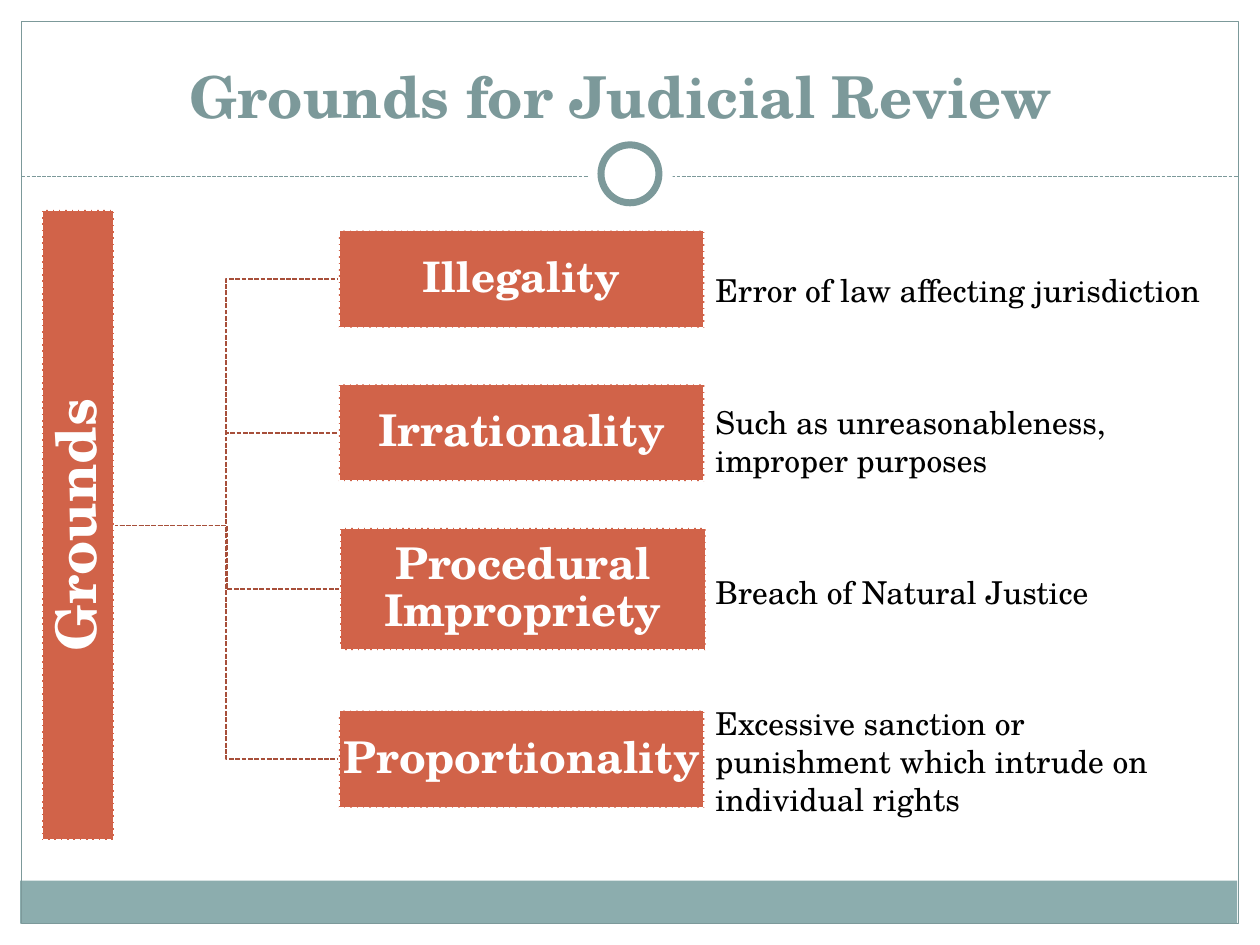
from dataclasses import dataclass

from lxml import etree
from pptx import Presentation
from pptx import util as u
from pptx.dml import color
from pptx.enum import dml, shapes, text
from pptx.oxml import ns


@dataclass(frozen=True)
class Theme:
    font: str = "TeX Gyre Schola"
    white: str = "FFFFFF"
    black: str = "000000"
    sage: str = "7C999A"
    band: str = "8CADAE"
    orange: str = "D16349"
    rust: str = "A74F3A"
    title_size: int = 33
    root_size: int = 32
    note_size: int = 18
    thin: float = 0.75
    dashed: float = 0.9
    ring: float = 4


THEME = Theme()
ROOT_EDGE, ROOT_MIDDLE = 0.9, 4.17
BRANCH_WIDTH = 2.9
NOTE_LEFT, NOTE_WIDTH = 5.58, 4.05

BRANCHES = [
    ("Illegality", 24, (2.69, 1.83, 0.77),
     "Error of law affecting jurisdiction", (2.1, 0.71)),
    ("Irrationality", 25, (2.69, 3.05, 0.77),
     "Such as unreasonableness, improper purposes", (3.15, 0.71)),
    ("Procedural Impropriety", 25, (2.7, 4.19, 0.97),
     "Breach of Natural Justice", (4.5, 0.4)),
    ("Proportionality", 25, (2.69, 5.64, 0.77),
     "Excessive sanction or punishment which intrude on individual rights",
     (5.54, 0.71)),
]


def rgb(value):
    return color.RGBColor.from_string(value)


def style_line(shape, line_color, width, dashed=False):
    shape.line.color.rgb = rgb(line_color)
    shape.line.width = u.Pt(width)
    if dashed:
        shape.line.dash_style = dml.MSO_LINE.SQUARE_DOT


def add_plain_shape(slide, kind, box, fill=None):
    shape = slide.shapes.add_shape(kind, *map(u.Inches, box))
    shape.shadow.inherit = False
    shape.line.fill.background()
    if fill:
        shape.fill.solid()
        shape.fill.fore_color.rgb = rgb(fill)
    else:
        shape.fill.background()
    return shape


def write_text(shape, wording, size, text_color, bold=False, align=None):
    shape.text_frame.text = wording
    paragraph = shape.text_frame.paragraphs[0]
    paragraph.alignment = align
    paragraph.font.name = THEME.font
    paragraph.font.size = u.Pt(size)
    paragraph.font.bold = bold
    paragraph.font.color.rgb = rgb(text_color)
    return paragraph


def add_frame(slide):
    rectangle, oval = shapes.MSO_SHAPE.RECTANGLE, shapes.MSO_SHAPE.OVAL
    add_plain_shape(slide, rectangle, (0.16, 6.99, 9.66, 0.34), THEME.band)
    border = add_plain_shape(slide, rectangle, (0.17, 0.17, 9.66, 7.16))
    style_line(border, THEME.sage, THEME.thin)
    rule = slide.shapes.add_connector(
        shapes.MSO_CONNECTOR.STRAIGHT, *map(u.Inches, (0.17, 1.4, 9.83, 1.4)))
    style_line(rule, THEME.sage, THEME.thin, dashed=True)
    properties = rule.element.find(ns.qn("p:spPr"))
    etree.SubElement(properties, ns.qn("a:effectLst"))
    add_plain_shape(slide, oval, (4.67, 1.05, 0.67, 0.67), THEME.white)
    ring = add_plain_shape(slide, oval, (4.77, 1.15, 0.46, 0.46), THEME.white)
    style_line(ring, THEME.sage, THEME.ring)


def format_title(slide, wording):
    title = slide.shapes.title
    title.left, title.top, title.width, title.height = map(
        u.Inches, (0.33, 0.25, 9.33, 0.83))
    title.text_frame.auto_size = text.MSO_AUTO_SIZE.NONE
    title.text_frame.vertical_anchor = text.MSO_ANCHOR.BOTTOM
    write_text(title, wording, THEME.title_size, THEME.sage, True,
               text.PP_ALIGN.CENTER)


def add_elbow(slide, end_x, end_y):
    middle_x = (ROOT_EDGE + end_x) / 2
    points = [(middle_x, ROOT_MIDDLE), (middle_x, end_y), (end_x, end_y)]
    builder = slide.shapes.build_freeform(
        u.Inches(ROOT_EDGE), u.Inches(ROOT_MIDDLE))
    builder.add_line_segments(
        [(u.Inches(x), u.Inches(y)) for x, y in points], close=False)
    elbow = builder.convert_to_shape()
    elbow.shadow.inherit = False
    elbow.fill.background()
    style_line(elbow, THEME.rust, THEME.dashed, dashed=True)


def add_node(slide, wording, size, box, rotation=0):
    node = add_plain_shape(slide, shapes.MSO_SHAPE.RECTANGLE, box, THEME.orange)
    style_line(node, THEME.white, THEME.dashed, dashed=True)
    node.rotation = rotation
    frame = node.text_frame
    frame.word_wrap = True
    frame.vertical_anchor = text.MSO_ANCHOR.MIDDLE
    frame.margin_left = frame.margin_right = u.Inches(0.02)
    frame.margin_top = frame.margin_bottom = u.Inches(0.02)
    paragraph = write_text(node, wording, size, THEME.white, True,
                           text.PP_ALIGN.CENTER)
    paragraph.line_spacing = 0.9


def add_note(slide, wording, top, height):
    note = slide.shapes.add_textbox(
        *map(u.Inches, (NOTE_LEFT, top, NOTE_WIDTH, height)))
    note.text_frame.word_wrap = True
    write_text(note, wording, THEME.note_size, THEME.black)


def main():
    presentation = Presentation()
    presentation.slide_width = u.Inches(10)
    presentation.slide_height = u.Inches(7.5)
    slide = presentation.slides.add_slide(presentation.slide_layouts[5])

    add_frame(slide)
    format_title(slide, "Grounds for Judicial Review ")
    for _, _, (left, top, height), _, _ in reversed(BRANCHES):
        add_elbow(slide, left, top + height / 2)
    add_node(slide, "Grounds", THEME.root_size, (-1.88, 3.88, 5, 0.57), 270)
    for label, size, (left, top, height), _, _ in BRANCHES:
        add_node(slide, label, size, (left, top, BRANCH_WIDTH, height))
    for _, _, _, wording, (top, height) in BRANCHES:
        add_note(slide, wording, top, height)

    presentation.save("out.pptx")


if __name__ == "__main__":
    main()
